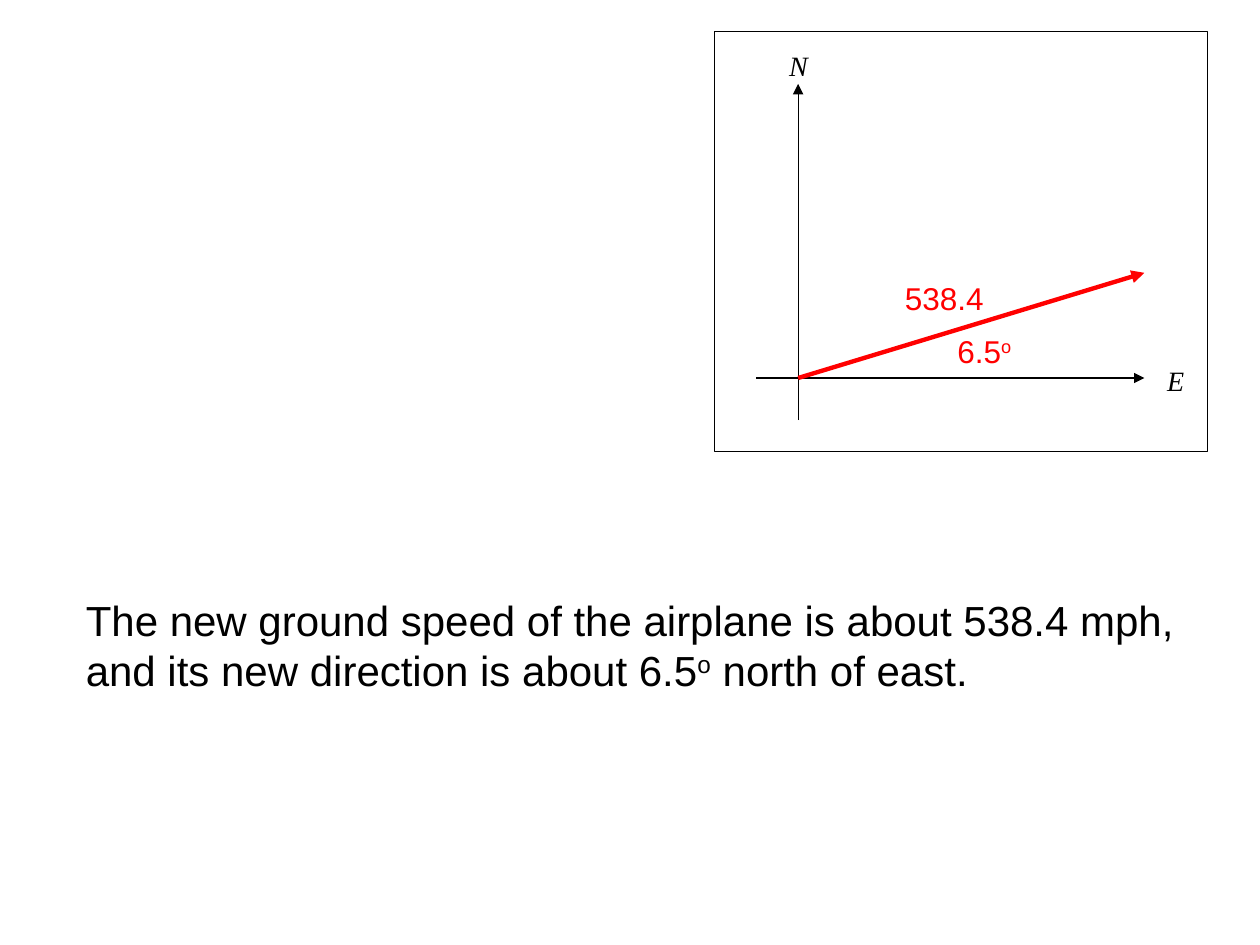
from dataclasses import dataclass

from lxml import etree
from pptx import Presentation
from pptx.dml.color import RGBColor
from pptx.enum.shapes import MSO_CONNECTOR, MSO_SHAPE
from pptx.enum.text import MSO_AUTO_SIZE
from pptx.oxml.ns import qn
from pptx.util import Cm, Pt

RECTANGLE = MSO_SHAPE.RECTANGLE
STRAIGHT = MSO_CONNECTOR.STRAIGHT
FIT_TO_TEXT = MSO_AUTO_SIZE.SHAPE_TO_FIT_TEXT


@dataclass(frozen=True)
class Theme:
    ink: RGBColor = RGBColor(0, 0, 0)
    paper: RGBColor = RGBColor(255, 255, 255)
    vector: RGBColor = RGBColor(255, 0, 0)
    sans: str = "Arial"
    serif: str = "Times New Roman"
    body_size: Pt = Pt(24)
    value_size: Pt = Pt(18)
    axis_size: Pt = Pt(16)
    thin: Pt = Pt(0.75)
    thick: Pt = Pt(2.5)


theme = Theme()


def add_arrow(slide, start, end, color, width):
    arrow = slide.shapes.add_connector(STRAIGHT, *map(Cm, start + end))
    arrow.line.color.rgb = color
    arrow.line.width = width
    etree.SubElement(arrow.line._get_or_add_ln(), qn("a:tailEnd"), type="triangle")
    etree.SubElement(arrow.element.spPr, qn("a:effectLst"))


def add_label(slide, box, parts, font_name, size, color, italic=False, wrap=False):
    """Add a text box whose parts alternate between normal text and superscript."""
    label = slide.shapes.add_textbox(*map(Cm, box))
    frame = label.text_frame
    frame.word_wrap = wrap
    frame.auto_size = FIT_TO_TEXT
    for index, part in enumerate(parts):
        run = frame.paragraphs[0].add_run()
        run.text = part
        run.font.name = font_name
        run.font.size = size
        run.font.color.rgb = color
        run.font.italic = italic
        if index % 2:
            run._r.get_or_add_rPr().set("baseline", "30000")


prs = Presentation()
prs.slide_width, prs.slide_height = Cm(25.4), Cm(19.05)
slide = prs.slides.add_slide(prs.slide_layouts[6])

# Diagram frame
frame = slide.shapes.add_shape(RECTANGLE, Cm(14.4), Cm(0.64), Cm(9.95), Cm(8.47))
frame.shadow.inherit = False
frame.fill.solid()
frame.fill.fore_color.rgb = theme.paper
frame.line.color.rgb = theme.ink
frame.line.width = theme.thin

# Axes and velocity vector
origin_x, origin_y = 16.09, 7.62
east_end = 23.07
overhang = 0.85
arrows = [
    ((origin_x, origin_y + overhang), (origin_x, 1.69), theme.ink, theme.thin),
    ((origin_x - overhang, origin_y), (east_end, origin_y), theme.ink, theme.thin),
    ((origin_x, origin_y), (east_end, 5.5), theme.vector, theme.thick),
]
for start, end, color, width in arrows:
    add_arrow(slide, start, end, color, width)

# Axis names
for name, left, top in [("N", 15.66, 0.85), ("E", 23.28, 7.2)]:
    add_label(slide, (left, top, 0.88, 0.93), [name],
              theme.serif, theme.axis_size, theme.ink, italic=True)

# Conclusion
conclusion = [
    "The new ground speed of the airplane is about 538.4 mph, "
    "and its new direction is about 6.5",
    "o",
    " north of east.",
]
add_label(slide, (1.48, 11.85, 22.48, 2.28), conclusion,
          theme.sans, theme.body_size, theme.ink, wrap=True)

# Speed and direction of the vector
for box, parts in [((17.99, 5.5, 2.11, 1.02), ["538.4"]),
                   ((19.05, 6.56, 1.63, 1.02), ["6.5", "o"])]:
    add_label(slide, box, parts, theme.sans, theme.value_size, theme.vector)

prs.save("out.pptx")
